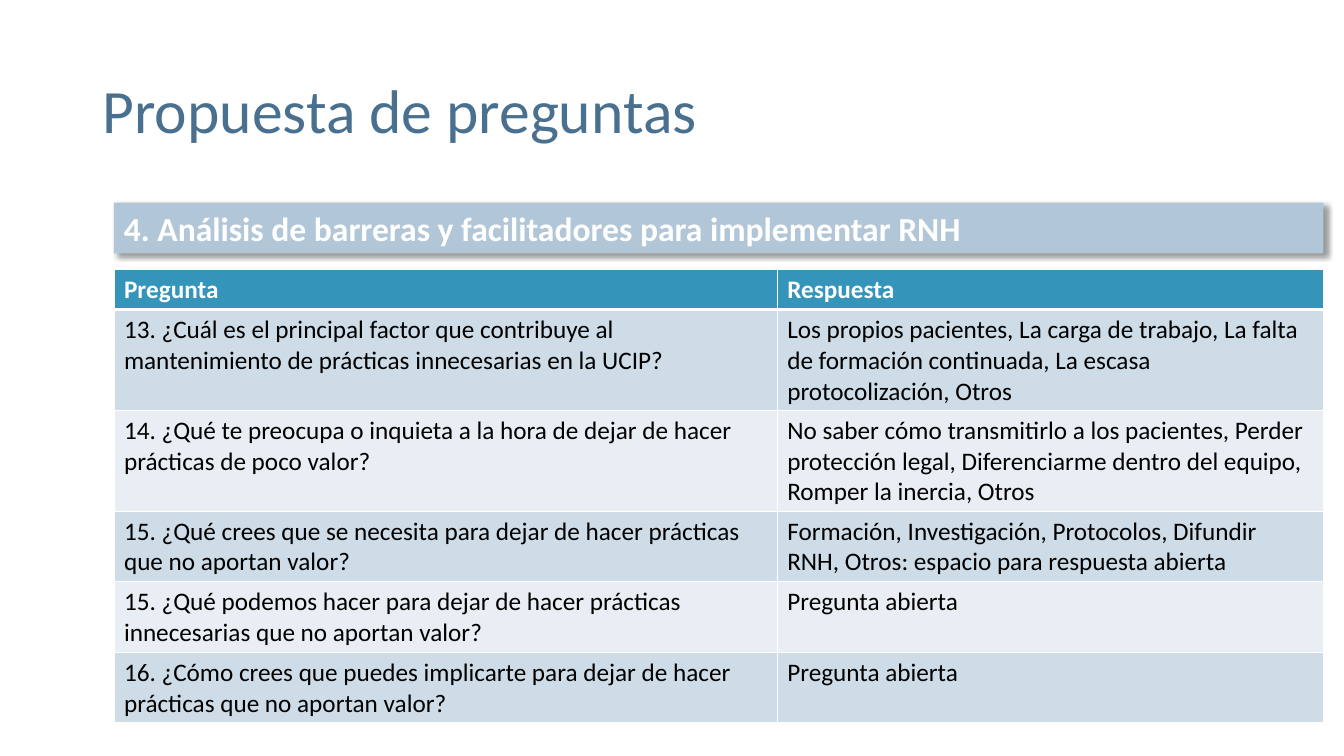
from dataclasses import dataclass

from lxml.etree import SubElement
from pptx import Presentation
from pptx.dml.color import RGBColor
from pptx.enum.shapes import MSO_SHAPE
from pptx.enum.text import MSO_ANCHOR, MSO_AUTO_SIZE, PP_ALIGN
from pptx.oxml.ns import qn
from pptx.util import Inches, Pt


@dataclass(frozen=True)
class Theme:
    font: str = "Calibri"
    title: str = "4A7090"
    bar: str = "B1C6D7"
    head: str = "3494BA"
    bands: tuple = ("CEDCE7", "E8EEF3")
    dark: str = "000000"
    light: str = "FFFFFF"
    big: int = 44
    mid: int = 24
    small: int = 18


THEME = Theme()
WIDE, HIGH = Inches(13.33), Inches(7.5)
LEFT, SPAN = 8.48, 90
LINE, PAD = 4, 1.33

ROWS = [
    (1, "Pregunta", "Respuesta"),
    (3, "13. ¿Cuál es el principal factor que contribuye al mantenimiento de prácticas innecesarias en la UCIP?",
     "Los propios pacientes, La carga de trabajo, La falta de formación continuada, La escasa protocolización, Otros"),
    (3, "14. ¿Qué te preocupa o inquieta a la hora de dejar de hacer prácticas de poco valor?",
     "No saber cómo transmitirlo a los pacientes, Perder protección legal, Diferenciarme dentro del equipo, "
     "Romper la inercia, Otros"),
    (2, "15. ¿Qué crees que se necesita para dejar de hacer prácticas que no aportan valor?",
     "Formación, Investigación, Protocolos, Difundir RNH, Otros: espacio para respuesta abierta"),
    (2, "15. ¿Qué podemos hacer para dejar de hacer prácticas innecesarias que no aportan valor?",
     "Pregunta abierta"),
    (2, "16. ¿Cómo crees que puedes implicarte para dejar de hacer prácticas que no aportan valor?",
     "Pregunta abierta"),
]


def across(share):
    return int(WIDE * share / 100)


def down(share):
    return int(HIGH * share / 100)


def place(left, top, width, height):
    return across(left), down(top), across(width), down(height)


def apply(target, form):
    for name, value in form.items():
        setattr(target, name, value)


def paint(item, tint):
    item.fill.solid()
    item.fill.fore_color.rgb = RGBColor.from_string(tint)


def write(frame, text, size, tint, bold=False, space=1.0):
    apply(frame, {"word_wrap": True})
    para = frame.paragraphs[0]
    apply(para, {"alignment": PP_ALIGN.LEFT, "line_spacing": space})
    run = para.add_run()
    run.text = text
    apply(run.font, {"name": THEME.font, "size": Pt(size), "bold": bold})
    run.font.color.rgb = RGBColor.from_string(tint)


def tinted(parent, tint):
    return SubElement(parent, qn("a:srgbClr"), val=tint)


def shade(shape):
    shape.shadow.inherit = False
    glow = SubElement(shape._element.spPr.find(qn("a:effectLst")), qn("a:outerShdw"),
                      blurRad=str(Pt(4)), dist=str(Pt(3)), dir="2700000",
                      algn="tl", rotWithShape="0")
    SubElement(tinted(glow, THEME.dark), qn("a:alpha"), val="40000")


def edge(cell, base):
    props = cell._tc.get_or_add_tcPr()
    for side, width in {"L": 1, "R": 1, "T": 1, "B": base}.items():
        line = SubElement(props, qn("a:ln" + side), w=str(Pt(width)))
        tinted(SubElement(line, qn("a:solidFill")), THEME.light)


def add_title(slide, text):
    box = slide.shapes.add_textbox(*place(6.9, 5.33, 86.25, 19.33))
    apply(box.text_frame, {"vertical_anchor": MSO_ANCHOR.MIDDLE})
    write(box.text_frame, text, THEME.big, THEME.title, space=0.9)


def add_bar(slide, text):
    bar = slide.shapes.add_shape(MSO_SHAPE.RECTANGLE, *place(LEFT, 26.8, SPAN, 6.73))
    paint(bar, THEME.bar)
    bar.line.fill.background()
    shade(bar)
    apply(bar.text_frame, {"vertical_anchor": MSO_ANCHOR.TOP,
                           "auto_size": MSO_AUTO_SIZE.SHAPE_TO_FIT_TEXT})
    write(bar.text_frame, text, THEME.mid, THEME.light, bold=True)


def add_grid(slide, rows):
    tall = [lines * LINE + PAD for lines, *_ in rows]
    grid = slide.shapes.add_table(len(rows), 2, *place(LEFT, 35.6, SPAN, sum(tall))).table
    for col, share in zip(grid.columns, (49.35, 40.65)):
        col.width = across(share)
    for at, (_, *texts) in enumerate(rows):
        grid.rows[at].height = down(tall[at])
        top = at == 0
        fill = THEME.head if top else THEME.bands[(at - 1) % 2]
        ink = THEME.light if top else THEME.dark
        for col, text in enumerate(texts):
            cell = grid.cell(at, col)
            edge(cell, 3 if top else 1)
            paint(cell, fill)
            write(cell.text_frame, text, THEME.small, ink, bold=top)


def main():
    deck = Presentation()
    apply(deck, {"slide_width": WIDE, "slide_height": HIGH})
    slide = deck.slides.add_slide(deck.slide_layouts[6])
    add_title(slide, "Propuesta de preguntas")
    add_bar(slide, "4. Análisis de barreras y facilitadores para implementar RNH")
    add_grid(slide, ROWS)
    deck.save("out.pptx")


if __name__ == "__main__":
    main()
